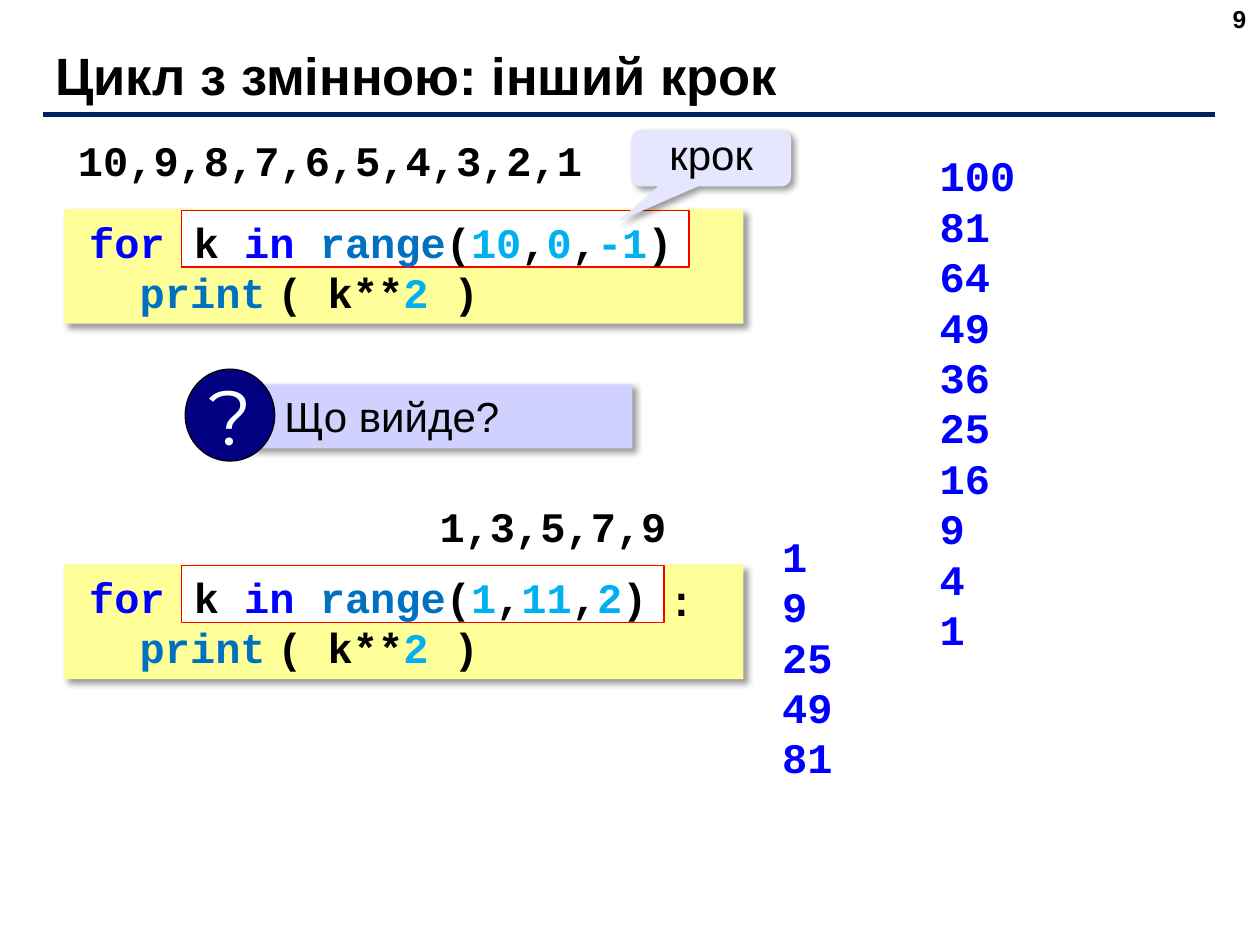
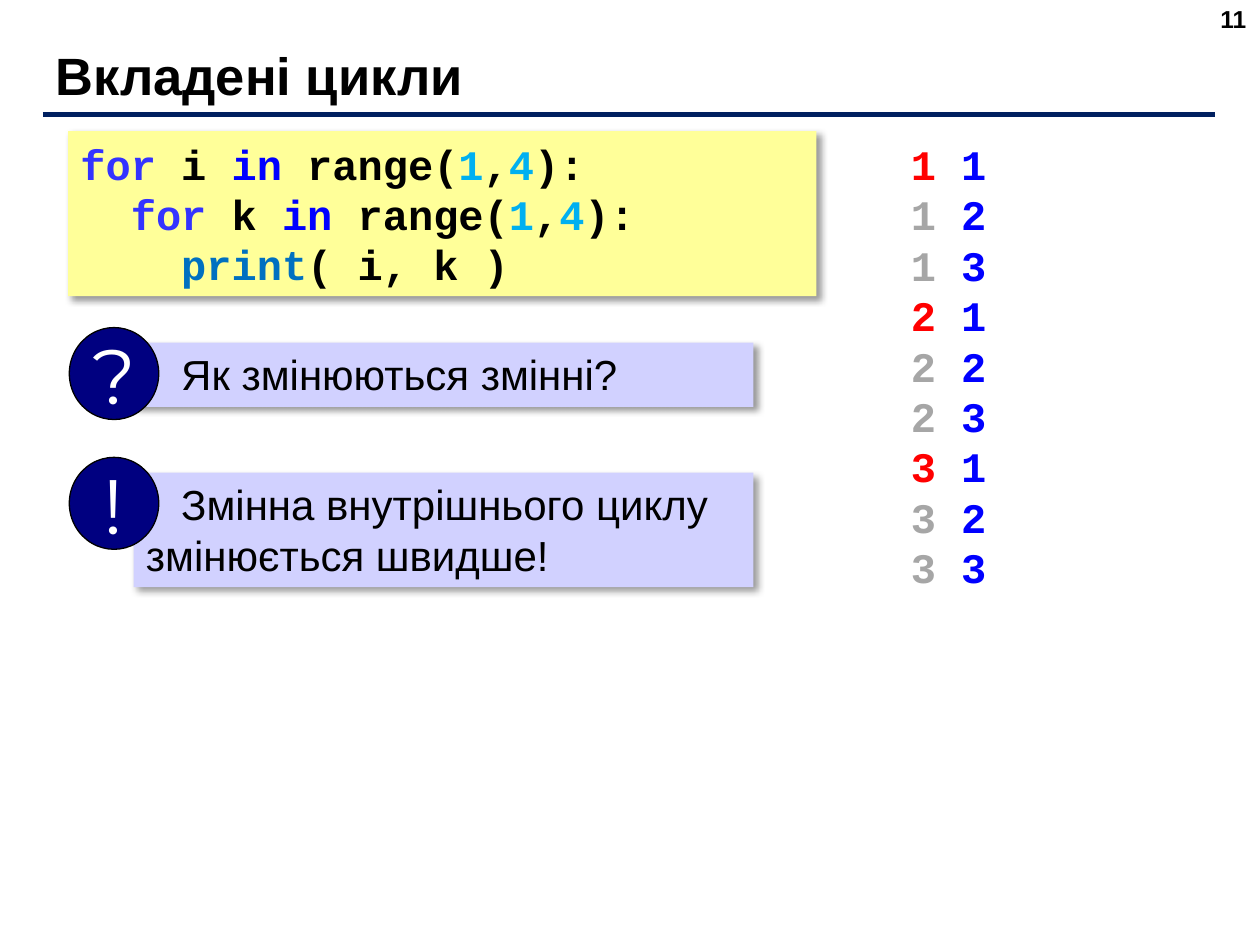
import dataclasses

import pptx
import pptx.dml.color
import pptx.enum.shapes
import pptx.enum.text
import pptx.oxml
import pptx.oxml.ns
import pptx.util

Inches = pptx.util.Inches
Kind = pptx.enum.shapes.MSO_SHAPE
Align = pptx.enum.text.PP_ALIGN
Anchor = pptx.enum.text.MSO_ANCHOR


@dataclasses.dataclass(frozen=True)
class Theme:
    # Colours
    black: str = "000000"
    white: str = "FFFFFF"
    navy: str = "002060"
    disc: str = "000080"
    blue: str = "0000FF"
    loop: str = "3333FF"
    call: str = "0070C0"
    digit: str = "00B0F0"
    red: str = "FF0000"
    gray: str = "A6A6A6"
    code: str = "FFFF99"
    note: str = "D1D1FF"
    hint: str = "E6E6FF"
    # Fonts and type sizes
    sans: str = "Arial"
    mono: str = "Courier New"
    mark: str = "Montserrat"
    head: int = 30
    text: int = 24
    page: int = 14
    sign: int = 44


T = Theme()


def color(code):
    return pptx.dml.color.RGBColor.from_string(code)


def write(shape, lines, font=T.sans, size=T.text, ink=T.black, bold=False,
          align=Align.LEFT, anchor=Anchor.TOP, wrap=True, space=None,
          indents=(), foot=0.05):
    """Each line is a string or a list of (text, colour[, font]) runs."""
    frame = shape.text_frame
    frame.word_wrap = wrap
    frame.auto_size = pptx.enum.text.MSO_AUTO_SIZE.NONE
    frame.vertical_anchor = anchor
    frame.margin_bottom = Inches(foot)
    for row, line in enumerate(lines):
        par = frame.add_paragraph() if row else frame.paragraphs[0]
        par.alignment = align
        if space:
            par.line_spacing = space
        if indents:
            props = par._p.get_or_add_pPr()
            props.set("marL", "0")
            props.set("indent", str(Inches(indents[row])))
        for part in [(line, ink)] if isinstance(line, str) else line:
            run = par.add_run()
            run.text = part[0]
            run.font.color.rgb = color(part[1])
            run.font.name = part[2] if len(part) > 2 else font
            run.font.size = pptx.util.Pt(size)
            run.font.bold = bold


def shade(shape):
    """Give a shape the soft shadow that panels share."""
    shape.shadow.inherit = False
    effects = shape._element.spPr.find(pptx.oxml.ns.qn("a:effectLst"))
    effects.append(pptx.oxml.parse_xml(
        f'<a:outerShdw {pptx.oxml.ns.nsdecls("a")} blurRad="50800" '
        'dist="38100" dir="2700000" algn="tl" rotWithShape="0">'
        f'<a:srgbClr val="{T.black}"><a:alpha val="40000"/></a:srgbClr>'
        '</a:outerShdw>'))


def panel(shapes, box, fill, kind=Kind.RECTANGLE, edge=None):
    """Outlined shapes are flat, the others cast a shadow."""
    shape = shapes.add_shape(kind, *map(Inches, box))
    shape.fill.solid()
    shape.fill.fore_color.rgb = color(fill)
    if edge:
        shape.shadow.inherit = False
        shape.line.color.rgb = color(edge)
        shape.line.width = pptx.util.Pt(0.75)
    else:
        shape.line.fill.background()
        shade(shape)
    return shape


def label(slide, box, lines, **style):
    write(slide.shapes.add_textbox(*map(Inches, box)), lines, **style)


def output(slide, box, lines, ink=T.black):
    label(slide, box, lines, font=T.mono, ink=ink, bold=True)


def listing(slide, box, lines, **style):
    write(panel(slide.shapes, box, T.code), lines, font=T.mono, bold=True,
          anchor=Anchor.MIDDLE, **style)


def note(slide, left, top, sign, text, box, lead):
    """Draw a text bar with a round sign over its left end."""
    group = slide.shapes.add_group_shape()
    write(panel(group.shapes, box, T.note), [text], indents=[lead])
    disc = panel(group.shapes, (left, top, 0.71, 0.73), T.disc,
                 Kind.OVAL, T.black)
    write(disc, [sign], font=T.mark, size=T.sign, ink=T.white,
          align=Align.CENTER, anchor=Anchor.MIDDLE, wrap=False)


def loop(slide, top, values, width):
    """Draw a squares loop with its range header set in a white box."""
    listing(slide, (0.51, top, 5.39, 0.91), [
        [("for", T.blue)],
        [("print", T.call), (" ", T.call, T.sans), ("( k**", T.black),
         ("2", T.digit), (" )", T.black)],
    ], indents=(0.1, 0.5))
    runs = [("k ", T.black), ("in ", T.blue), ("range", T.call)]
    for mark, value in zip("(,,", values):
        runs += [(mark, T.black), (value, T.digit)]
    head = panel(slide.shapes, (1.44, top + 0.01, width, 0.45), T.white,
                 edge=T.red)
    write(head, [runs + [(")", T.black)]], font=T.mono, bold=True, foot=0)


def start(deck, title, page):
    """Add a slide with its title, rule and page number."""
    slide = deck.slides.add_slide(deck.slide_layouts[5])
    head = slide.shapes.title
    head.left, head.top, head.width, head.height = map(
        Inches, (0.34, 0.33, 9.16, 0.52))
    write(head, [title], size=T.head, bold=True, anchor=Anchor.MIDDLE)
    label(slide, (7.66, -0.02, 2.33, 0.52), [page], size=T.page, bold=True,
          align=Align.RIGHT)
    rule = slide.shapes.add_connector(
        pptx.enum.shapes.MSO_CONNECTOR.STRAIGHT,
        *map(Inches, (0.34, 0.91, 9.64, 0.91)))
    rule.line.color.rgb = color(T.navy)
    rule.line.width = pptx.util.Pt(3)
    rule._element.spPr.append(pptx.oxml.parse_xml(
        f'<a:effectLst {pptx.oxml.ns.nsdecls("a")}/>'))
    return slide


def steps(deck):
    slide = start(deck, "Цикл з змінною: інший крок", "9")
    # Printed squares
    output(slide, (7.36, 1.14, 0.81, 4.14),
           [str(k ** 2) for k in range(10, 0, -1)], T.blue)
    output(slide, (6.11, 4.16, 0.6, 2.12),
           [str(k ** 2) for k in range(1, 11, 2)], T.blue)
    note(slide, 1.47, 2.93, "?", "Що вийде?", (1.98, 3.05, 3.04, 0.51), 0.18)
    # Loops and the values of k
    loop(slide, 4.48, ("1", "11", "2"), 3.83)
    output(slide, (5.21, 4.51, 0.45, 0.5), [":"])
    loop(slide, 1.66, ("10", "0", "-1"), 4.03)
    hint = panel(slide.shapes, (5.01, 1.03, 1.27, 0.45), T.hint,
                 Kind.ROUNDED_RECTANGULAR_CALLOUT)
    for spot, value in enumerate((-0.58, 1.11, 0.17)):
        hint.adjustments[spot] = value
    write(hint, ["крок"], align=Align.CENTER, space=0.8)
    output(slide, (0.52, 1.02, 4.23, 0.51), ["10,9,8,7,6,5,4,3,2,1"])
    output(slide, (3.39, 3.92, 2.02, 0.5), ["1,3,5,7,9"])


def nested(deck):
    slide = start(deck, "Вкладені цикли", "11")
    # Code
    heads = [[("for", T.loop), (f" {name} ", T.black), ("in", T.blue),
              (" range(", T.black), ("1", T.digit), (",", T.black),
              ("4", T.digit), ("):", T.black)] for name in "ik"]
    listing(slide, (0.54, 1.04, 5.94, 1.31),
            heads + [[("print", T.call), ("( i, k )", T.black)]],
            indents=(0, 0.4, 0.8))
    # Question and answer
    note(slide, 0.55, 2.6, "?", "Як змінюються змінні?",
         (1.06, 2.72, 4.92, 0.51), 0.28)
    note(slide, 0.55, 3.63, "!",
         "Змінна внутрішнього циклу змінюється швидше!",
         (1.06, 3.75, 4.92, 0.91), 0.28)
    # Printed pairs, red where the outer variable changes
    output(slide, (7.13, 1.05, 0.81, 3.74),
           [[(f"{i} ", T.red if k == 1 else T.gray), (str(k), T.blue)]
            for i in range(1, 4) for k in range(1, 4)])


def main():
    deck = pptx.Presentation()
    deck.slide_width = Inches(10)
    deck.slide_height = Inches(7.5)
    steps(deck)
    nested(deck)
    deck.save("out.pptx")


if __name__ == "__main__":
    main()
